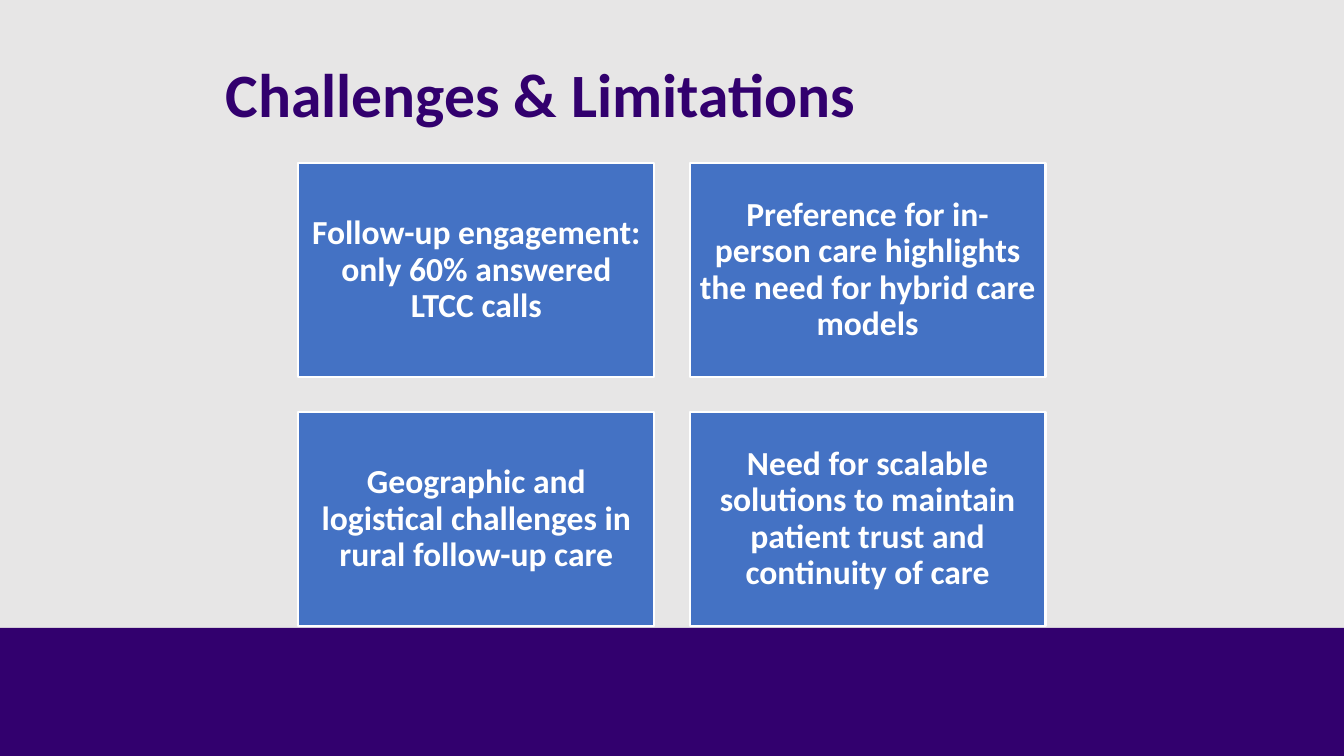
from pptx import Presentation
from pptx.dml.color import RGBColor
from pptx.enum.shapes import MSO_SHAPE
from pptx.enum.text import MSO_ANCHOR, PP_ALIGN
from pptx.util import Inches, Pt

COLORS = {
    "background": "E7E6E6",
    "purple": "32006E",
    "card": "4472C4",
    "white": "FFFFFF",
}
CHALLENGES = [
    "Follow-up engagement: only 60% answered LTCC calls",
    "Preference for in-person care highlights the need for hybrid care models",
    "Geographic and logistical challenges in rural follow-up care",
    "Need for scalable solutions to maintain patient trust and continuity of care",
]
COLUMNS = 2
GRID_LEFT, GRID_TOP = 2.96, 1.62
CARD_WIDTH, CARD_HEIGHT = 3.53, 2.12
GAP = 0.35


def color(name):
    return RGBColor.from_string(COLORS[name])


def write_text(shape, text, size, color_name, align, inset_y):
    frame = shape.text_frame
    frame_format = {
        "word_wrap": True,
        "vertical_anchor": MSO_ANCHOR.MIDDLE,
        "margin_left": Inches(0.1),
        "margin_right": Inches(0.1),
        "margin_top": Inches(inset_y),
        "margin_bottom": Inches(inset_y),
    }
    for name, value in frame_format.items():
        setattr(frame, name, value)
    paragraph = frame.paragraphs[0]
    paragraph.alignment = align
    paragraph.line_spacing = 0.9
    run = paragraph.add_run()
    run.text = text
    for name, value in {"name": "Calibri", "size": Pt(size), "bold": True}.items():
        setattr(run.font, name, value)
    run.font.color.rgb = color(color_name)


def add_rectangle(slide, left, top, width, height, fill):
    shape = slide.shapes.add_shape(
        MSO_SHAPE.RECTANGLE, Inches(left), Inches(top), Inches(width), Inches(height)
    )
    shape.shadow.inherit = False
    shape.fill.solid()
    shape.fill.fore_color.rgb = color(fill)
    shape.line.fill.background()
    return shape


def add_title(slide, text):
    box = slide.shapes.add_textbox(Inches(2.14), Inches(0.32), Inches(9.05), Inches(1.3))
    write_text(box, text, 44, "purple", PP_ALIGN.LEFT, 0.05)


def add_card(slide, index, text):
    row, column = divmod(index, COLUMNS)
    left = GRID_LEFT + column * (CARD_WIDTH + GAP)
    top = GRID_TOP + row * (CARD_HEIGHT + GAP)
    card = add_rectangle(slide, left, top, CARD_WIDTH, CARD_HEIGHT, "card")
    card.line.color.rgb = color("white")
    card.line.width = Pt(1.5)
    write_text(card, text, 24, "white", PP_ALIGN.CENTER, 0.1)


def main():
    presentation = Presentation()
    presentation.slide_width = Inches(13.33)
    presentation.slide_height = Inches(7.5)
    slide = presentation.slides.add_slide(presentation.slide_layouts[6])
    slide.background.fill.solid()
    slide.background.fill.fore_color.rgb = color("background")

    add_rectangle(slide, 0, 6.23, 13.33, 1.27, "purple")
    add_title(slide, "Challenges & Limitations")
    for index, text in enumerate(CHALLENGES):
        add_card(slide, index, text)

    presentation.save("out.pptx")


if __name__ == "__main__":
    main()
